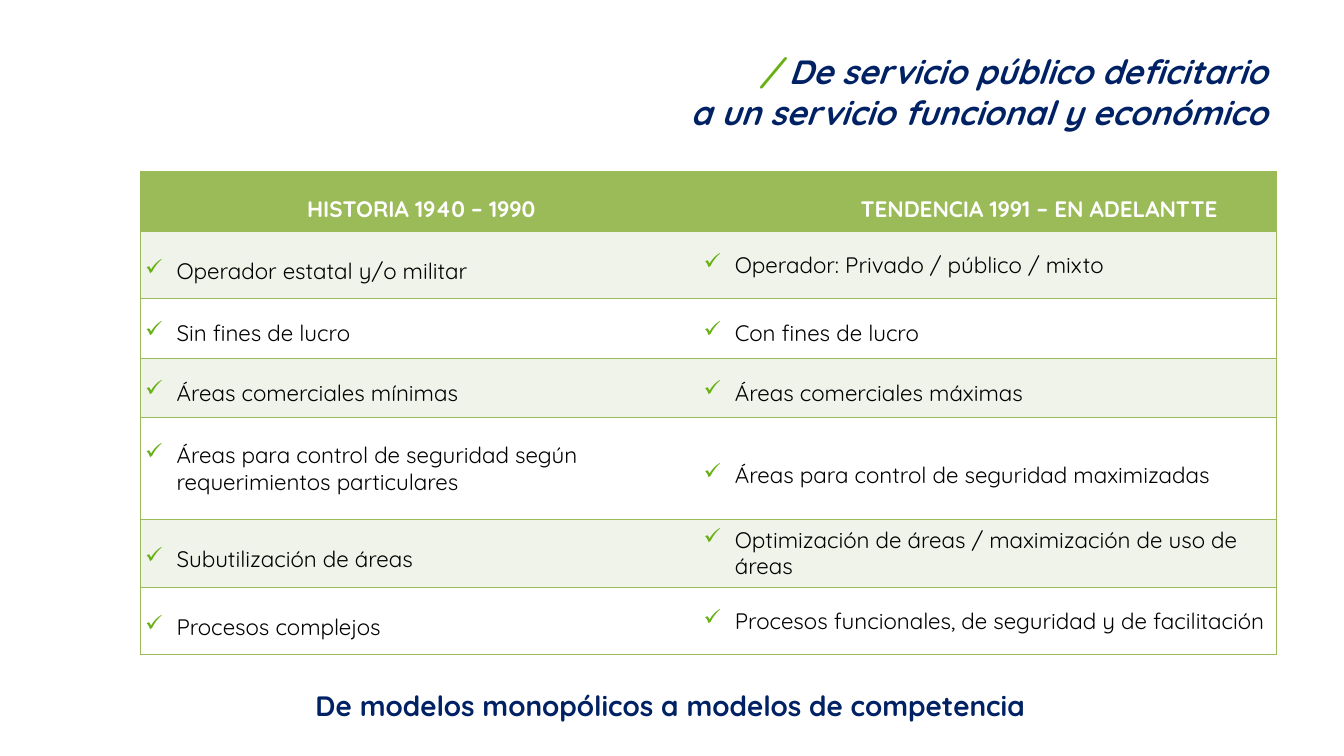
"""Slide comparing the historic and the current airport service models."""
from lxml import etree
from pptx import Presentation
from pptx.dml.color import RGBColor
from pptx.enum.text import MSO_ANCHOR, MSO_AUTO_SIZE, PP_ALIGN
from pptx.oxml.ns import qn
from pptx.util import Cm, Pt

NAVY = RGBColor(0x00, 0x22, 0x64)
GREEN = RGBColor(0x68, 0xB0, 0x13)
OLIVE = RGBColor(0x9B, 0xBB, 0x59)
PALE = RGBColor(0xEF, 0xF3, 0xEA)
WHITE = RGBColor(0xFF, 0xFF, 0xFF)
BLACK = RGBColor(0x00, 0x00, 0x00)
FONT = "Quicksand"
RIGHT = PP_ALIGN.RIGHT
MIDDLE = MSO_ANCHOR.MIDDLE
GROW = MSO_AUTO_SIZE.SHAPE_TO_FIT_TEXT
PLAIN = "{2D5ABB26-0587-4C30-8999-92F81FD0307C}"
TIGHT = Pt(18.7)


def add_run(para, text, size, color, bold=False, slant=False):
    run = para.add_run()
    run.text = text
    font = run.font
    font.name, font.size, font.bold, font.italic = FONT, Pt(size), bold, slant
    font.color.rgb = color


def add_line(cell, index, side):
    line = etree.Element(qn("a:" + side), w=str(Pt(1)))
    fill = etree.SubElement(line, qn("a:solidFill"))
    etree.SubElement(fill, qn("a:srgbClr"), val=str(OLIVE))
    cell._tc.get_or_add_tcPr().insert(index, line)


deck = Presentation()
deck.slide_width, deck.slide_height = Cm(33.87), Cm(19.05)
slide = deck.slides.add_slide(deck.slide_layouts[6])

title = slide.shapes.add_textbox(Cm(8.74), Cm(1.17), Cm(23.62), Cm(4.37)).text_frame
title.word_wrap = True
title.margin_right = Cm(0.43)
first = title.paragraphs[0]
add_run(first, "/ ", 24, GREEN, True, True)
add_run(first, "De servicio público deficitario", 24, NAVY, True, True)
second = title.add_paragraph()
add_run(second, "a un servicio funcional y económico", 24, NAVY, True, True)
first.alignment = second.alignment = RIGHT

heads = [("HISTORIA 1940 – 1990", 4.2), ("TENDENCIA 1991 – EN ADELANTTE", 4.08)]
rows = [
    (1.7, ("Operador estatal y/o militar", 0.3, None),
     ("Operador: Privado / público / mixto", 0.03, TIGHT)),
    (1.5, ("Sin fines de lucro", 0.23, None),
     ("Con fines de lucro", 0.23, None)),
    (1.5, ("Áreas comerciales mínimas", 0.23, None),
     ("Áreas comerciales máximas", 0.23, None)),
    (2.57, ("Áreas para control de seguridad según requerimientos particulares", 0, 0.99),
     ("Áreas para control de seguridad maximizadas", 0.38, TIGHT)),
    (1.7, ("Subutilización de áreas", 0.3, None),
     ("Optimización de áreas / maximización de uso de áreas", 0.03, TIGHT)),
    (1.7, ("Procesos complejos", 0.3, None),
     ("Procesos funcionales, de seguridad y de facilitación", 0.03, TIGHT)),
]

frame = slide.shapes.add_table(len(rows) + 1, 2, Cm(3.54), Cm(4.33), Cm(28.62), Cm(12.17))
table = frame.table
table.first_row = table.horz_banding = False
table._tbl.tblPr.find(qn("a:tableStyleId")).text = PLAIN
table.columns[0].width, table.columns[1].width = Cm(14.07), Cm(14.55)
table.rows[0].height = Cm(1.5)

for col, (text, indent) in enumerate(heads):
    cell = table.cell(0, col)
    cell.margin_top = Cm(0.38)
    cell.fill.solid()
    cell.fill.fore_color.rgb = OLIVE
    para = cell.text_frame.paragraphs[0]
    para._p.get_or_add_pPr().set("marL", str(Cm(indent)))
    add_run(para, text, 16, WHITE, True)

for row, (height, *pair) in enumerate(rows, 1):
    table.rows[row].height = Cm(height)
    for col, (text, top, space) in enumerate(pair):
        cell = table.cell(row, col)
        cell.margin_top = Cm(top)
        cell.fill.solid()
        cell.fill.fore_color.rgb = PALE if row % 2 else WHITE
        para = cell.text_frame.paragraphs[0]
        props = para._p.get_or_add_pPr()
        props.set("marL", str(Cm(0.91)))
        props.set("indent", str(-Cm(0.79)))
        tint = etree.SubElement(props, qn("a:buClr"))
        etree.SubElement(tint, qn("a:srgbClr"), val=str(GREEN))
        etree.SubElement(props, qn("a:buChar"), char="✓")
        if space:
            para.line_spacing = space
        add_run(para, text, 16, BLACK)

for cell in table.iter_cells():
    cell.vertical_anchor = MIDDLE
    cell.margin_left = cell.margin_right = cell.margin_bottom = 0

for row in table.rows:
    for cell, edge in zip(row.cells, ("lnL", "lnR")):
        for index, side in enumerate((edge, "lnT", "lnB")):
            add_line(cell, index, side)

note = slide.shapes.add_textbox(Cm(7.7), Cm(17.22), Cm(19.41), Cm(1.12)).text_frame
note.word_wrap = False
note.auto_size = GROW
add_run(note.paragraphs[0], "De modelos monopólicos a modelos de competencia", 20, NAVY, True)

deck.save("out.pptx")
